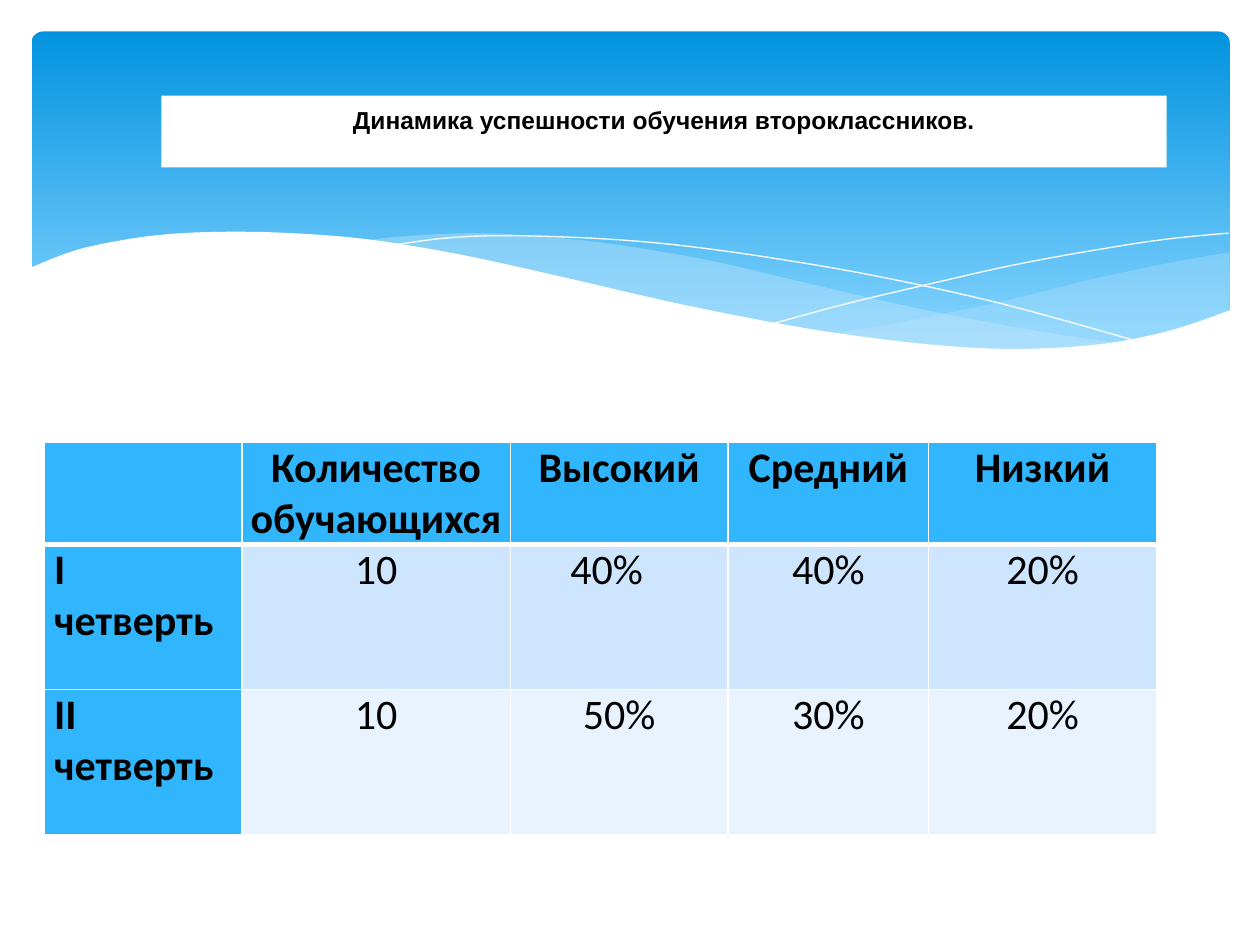
from lxml import etree
from pptx import Presentation
from pptx.dml.color import RGBColor
from pptx.enum.shapes import MSO_SHAPE
from pptx.enum.text import MSO_ANCHOR, PP_ALIGN
from pptx.oxml.ns import qn
from pptx.util import Inches, Pt

ROUNDED, RECTANGLE = MSO_SHAPE.ROUNDED_RECTANGLE, MSO_SHAPE.RECTANGLE
TOP, LEFT, CENTER = MSO_ANCHOR.TOP, PP_ALIGN.LEFT, PP_ALIGN.CENTER

# Content
TITLE = "Динамика успешности обучения второклассников."
ROWS = [
    ["", "Количество обучающихся", "Высокий", "Средний", "Низкий"],
    ["I четверть", "10", "40%", "40%", "20%"],
    ["II четверть", "10", "50%", "30%", "20%"],
]
COLUMN_WIDTHS = [1.57, 2.13, 1.73, 1.59, 1.81]
ROW_HEIGHTS = [0.81, 1.15, 1.15]

THEME = {
    "white": "FFFFFF", "text": "000000", "sky_top": "0293E0", "sky_bottom": "83D3FE",
    "wave": "C6E7FC", "header": "31B6FD", "bands": ["CEE5FE", "E8F3FF"],
    "title_font": "Arial", "title_size": 14, "table_font": "Calibri", "table_size": 24,
}

# Knots of the curves; each closed wave joins several curves
RIGHT_WAVE = [
    [(9.76, 2), (9.21, 2.1), (8.61, 2.23), (8.05, 2.37), (7.29, 2.53), (6.61, 2.65)],
    [(6.61, 2.65), (7.05, 2.71), (7.57, 2.76), (8.14, 2.78), (8.63, 2.75),
     (9.13, 2.67), (9.49, 2.57), (9.76, 2.47)],
]
MIDDLE_WAVE = [
    [(8.93, 2.73), (8.37, 2.65), (7.75, 2.54), (7.06, 2.4), (6.29, 2.22), (5.69, 2.08),
     (5.14, 1.98), (4.65, 1.91), (4.2, 1.87), (3.8, 1.85), (3.28, 1.87), (2.86, 1.91)],
    [(2.86, 1.91), (3.42, 1.99), (4.04, 2.11), (4.49, 2.22), (5.3, 2.4), (6.01, 2.55),
     (6.65, 2.66), (7.22, 2.74), (7.73, 2.77), (8.18, 2.78), (8.57, 2.77), (8.93, 2.73)],
]
FRONT_WAVE = [
    [(9.77, 2.46), (9.3, 2.62), (8.75, 2.73), (8.09, 2.77), (7.44, 2.74), (6.68, 2.65),
     (6.03, 2.54), (5.29, 2.39), (4.47, 2.2), (3.65, 2.02), (2.92, 1.9), (2.3, 1.85),
     (1.77, 1.84), (1.32, 1.86), (0.95, 1.91), (0.59, 1.99), (0.23, 2.13)],
    [(0.23, 3.29), (9.77, 3.29)],
]
FALLING_LINE = [(3.09, 1.95), (3.53, 1.89), (4.01, 1.87), (4.69, 1.89), (5.33, 1.94),
                (6.08, 2.04), (6.95, 2.19), (7.95, 2.41), (9.07, 2.72)]
RISING_LINE = [(6.13, 2.57), (6.72, 2.41), (7.48, 2.23), (8.06, 2.1), (8.66, 1.99),
               (9.24, 1.9), (9.75, 1.85)]


def color(name):
    return RGBColor.from_string(THEME.get(name, name))


def smooth(knots, steps=5):
    """Points of a Catmull-Rom curve through the knots."""
    if len(knots) < 3:
        return knots
    padded = [knots[0], *knots, knots[-1]]
    points = [knots[0]]
    for a, b, c, d in zip(padded, padded[1:], padded[2:], padded[3:]):
        for step in range(1, steps + 1):
            t = step / steps
            points.append(tuple(
                (2 * q + (r - p) * t + (2 * p - 5 * q + 4 * r - s) * t ** 2
                 + (3 * q - p - 3 * r + s) * t ** 3) / 2
                for p, q, r, s in zip(a, b, c, d)))
    return points


def add_curve(page, curves, closed):
    points = [(Inches(x), Inches(y)) for curve in curves for x, y in smooth(curve)]
    builder = page.shapes.build_freeform(*points[0], scale=1.0)
    builder.add_line_segments(points[1:], close=closed)
    shape = builder.convert_to_shape()
    shape.shadow.inherit = False
    return shape


def add_wave(page, curves, fill, opacity=100):
    wave = add_curve(page, curves, True)
    wave.fill.solid()
    wave.fill.fore_color.rgb = color(fill)
    wave.line.fill.background()
    if opacity < 100:
        tone = wave.fill._xPr.find(qn("a:solidFill"))[0]
        etree.SubElement(tone, qn("a:alpha"), val=str(opacity * 1000))


def add_thin_line(page, knots):
    line = add_curve(page, [knots], False)
    line.fill.background()
    line.line.color.rgb = color("white")
    line.line.width = Pt(0)


def add_panel(page, kind, *box):
    panel = page.shapes.add_shape(kind, *map(Inches, box))
    panel.shadow.inherit = False
    panel.line.fill.background()
    return panel


def style_text(para, font, size, bold, align):
    para.alignment = align
    para.font.name, para.font.size, para.font.bold = font, Pt(size), bold
    para.font.color.rgb = color("text")


def add_borders(cell, bottom):
    properties = cell._tc.get_or_add_tcPr()
    for side, width in (("L", 1), ("R", 1), ("T", 1), ("B", bottom)):
        line = etree.SubElement(properties, qn("a:ln" + side), w=str(Pt(width)))
        fill = etree.SubElement(line, qn("a:solidFill"))
        etree.SubElement(fill, qn("a:srgbClr"), val=THEME["white"])


def add_background(page):
    sky = add_panel(page, ROUNDED, 0.25, 0.25, 9.51, 2.7)
    sky.adjustments[0] = 0.034
    sky.fill.gradient()
    sky.fill.gradient_angle = 270
    for stop, position, name in zip(sky.fill.gradient_stops, (0, 0.9), ("sky_top", "sky_bottom")):
        stop.position = position
        stop.color.rgb = color(name)
    add_wave(page, RIGHT_WAVE, "wave", 29)
    add_wave(page, MIDDLE_WAVE, "wave", 40)
    add_thin_line(page, FALLING_LINE)
    add_thin_line(page, RISING_LINE)
    add_wave(page, FRONT_WAVE, "white")


def add_results(page):
    frame = page.shapes.add_table(len(ROWS), len(COLUMN_WIDTHS), Inches(0.35), Inches(3.51),
                                  Inches(sum(COLUMN_WIDTHS)), Inches(sum(ROW_HEIGHTS)))
    table = frame.table
    for column, width in zip(table.columns, COLUMN_WIDTHS):
        column.width = Inches(width)
    for row, height in zip(table.rows, ROW_HEIGHTS):
        row.height = Inches(height)
    for r, values in enumerate(ROWS):
        for c, value in enumerate(values):
            cell = table.cell(r, c)
            heading = r == 0 or c == 0
            cell.text = value
            cell.margin_left = cell.margin_right = Inches(0 if c == 1 else 0.08)
            cell.margin_top = cell.margin_bottom = 0
            add_borders(cell, 3 if r == 0 else 1)
            cell.fill.solid()
            cell.fill.fore_color.rgb = color("header" if heading else THEME["bands"][r - 1])
            style_text(cell.text_frame.paragraphs[0], THEME["table_font"], THEME["table_size"],
                       heading, LEFT if c == 0 else CENTER)
    # The first "high" value sits a little left of centre
    table.cell(1, 2).margin_right = Inches(0.28)


def add_title(page):
    box = add_panel(page, RECTANGLE, 1.28, 0.76, 7.98, 0.57)
    box.fill.solid()
    box.fill.fore_color.rgb = color("white")
    frame = box.text_frame
    frame.word_wrap = True
    frame.vertical_anchor = TOP
    frame.margin_top = Inches(0.07)
    frame.text = TITLE
    style_text(frame.paragraphs[0], THEME["title_font"], THEME["title_size"], True, CENTER)


def main():
    deck = Presentation()
    deck.slide_width, deck.slide_height = Inches(10), Inches(7.5)
    page = deck.slides.add_slide(deck.slide_layouts[6])
    add_background(page)
    add_results(page)
    add_title(page)
    deck.save("out.pptx")


if __name__ == "__main__":
    main()
